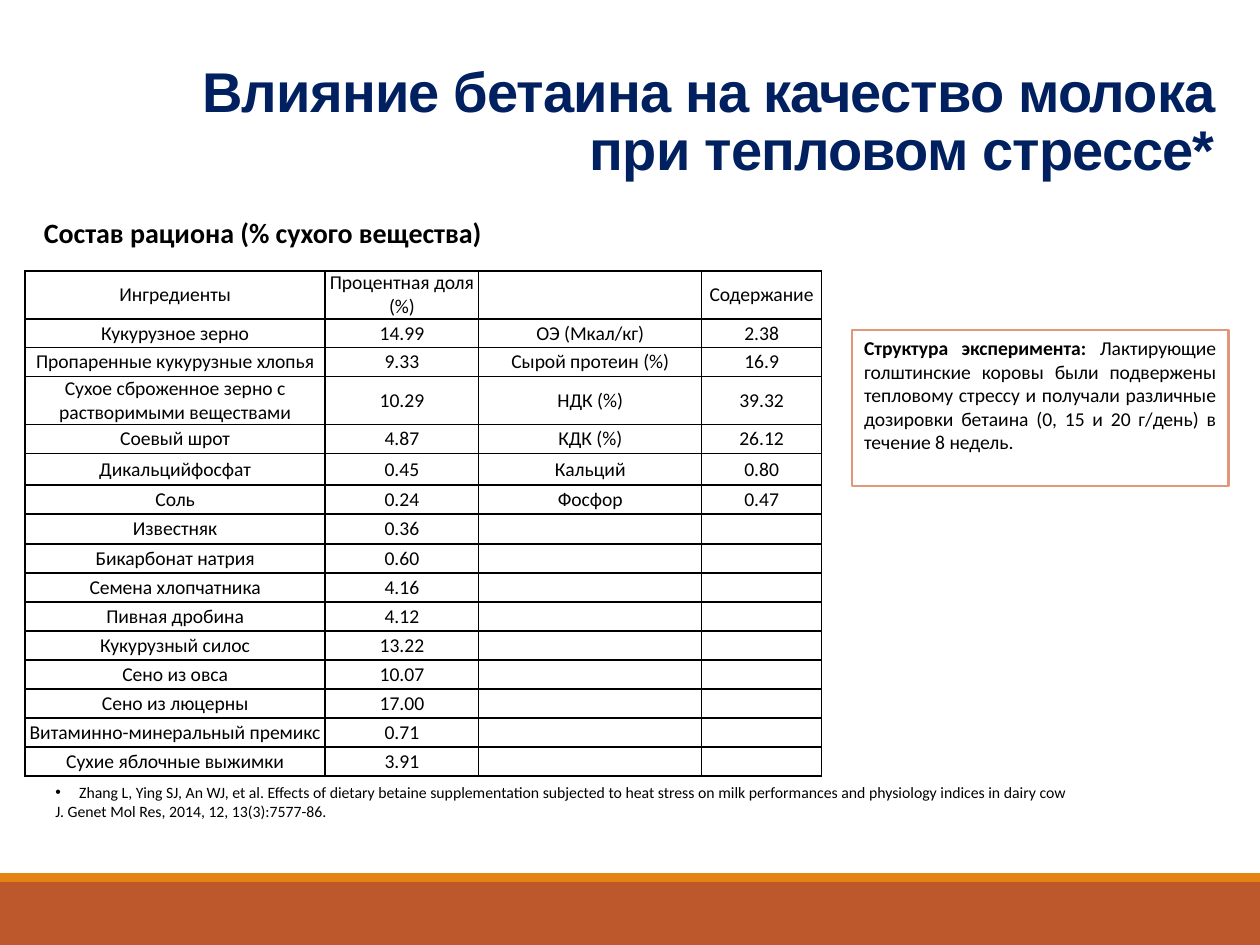
from dataclasses import dataclass
from typing import NamedTuple

from lxml.etree import SubElement
from pptx import Presentation
from pptx.dml.color import RGBColor
from pptx.enum.shapes import MSO_SHAPE
from pptx.enum.text import MSO_ANCHOR, PP_ALIGN
from pptx.oxml.ns import qn
from pptx.util import Emu, Inches, Pt

COLS, ROWS = 100, 75
CELL = Inches(0.1)


class Box(NamedTuple):
    """Place on the slide, in grid columns and rows."""
    left: float
    top: float
    width: float
    height: float

    def emu(self) -> list[Emu]:
        return [span(n) for n in self]


class Band(NamedTuple):
    box: Box
    color: str


class Run(NamedTuple):
    text: str
    bold: bool = False


@dataclass(frozen=True)
class Theme:
    ink: str = "000000"
    navy: str = "002060"
    paper: str = "FFFFFF"
    rust: str = "BD582C"
    amber: str = "E48312"
    frame: str = "E09878"
    head: str = "Arial"
    body: str = "Calibri"
    title: float = 32
    label: float = 16
    text: float = 11.2
    note: float = 9


THEME = Theme()

BANDS = (
    Band(Box(0, 70, COLS, 5), THEME.rust),
    Band(Box(0, 69.3, COLS, 0.7), THEME.amber),
)

WIDTHS = (23.8, 12.2, 17.7, 9.5)
ROW = 2.3
TALL = {0: 3.8, 3: 3.8, 5: 2.5, 7: 2.4}
DIET = (
    ("Ингредиенты", "Процентная доля (%)", "", "Содержание"),
    ("Кукурузное зерно", "14.99", "ОЭ (Мкал/кг)", "2.38"),
    ("Пропаренные кукурузные хлопья", "9.33", "Сырой протеин (%)", "16.9"),
    ("Сухое сброженное зерно с растворимыми веществами", "10.29",
     "НДК (%)", "39.32"),
    ("Соевый шрот", "4.87", "КДК (%)", "26.12"),
    ("Дикальцийфосфат", "0.45", "Кальций", "0.80"),
    ("Соль", "0.24", "Фосфор", "0.47"),
    ("Известняк", "0.36", "", ""),
    ("Бикарбонат натрия", "0.60", "", ""),
    ("Семена хлопчатника", "4.16", "", ""),
    ("Пивная дробина", "4.12", "", ""),
    ("Кукурузный силос", "13.22", "", ""),
    ("Сено из овса", "10.07", "", ""),
    ("Сено из люцерны", "17.00", "", ""),
    ("Витаминно-минеральный премикс", "0.71", "", ""),
    ("Сухие яблочные выжимки", "3.91", "", ""),
)
TRIAL = (
    Run("Структура эксперимента: ", True),
    Run("Лактирующие голштинские коровы были подвержены тепловому стрессу и "
        "получали различные дозировки бетаина (0, 15 и 20 г/день) в течение "
        "8 недель."),
)
SOURCE = (
    "Zhang L, Ying SJ, An WJ, et al. Effects of dietary betaine "
    "supplementation subjected to heat stress on milk performances and "
    "physiology indices in dairy cow",
    "J. Genet Mol Res, 2014, 12, 13(3):7577-86.",
)


def span(count: float) -> Emu:
    return Emu(round(count * CELL))


def style(para, size: float, align=PP_ALIGN.LEFT, color: str = THEME.ink,
          face: str = THEME.body, bold: bool = False) -> None:
    para.alignment = align
    font = para.font
    font.size, font.name, font.bold = Pt(size), face, bold
    font.color.rgb = RGBColor.from_string(color)


def add_text(slide, box: Box):
    frame = slide.shapes.add_textbox(*box.emu()).text_frame
    frame.word_wrap = True
    return frame


def add_rect(slide, box: Box, color: str):
    rect = slide.shapes.add_shape(MSO_SHAPE.RECTANGLE, *box.emu())
    rect.shadow.inherit = False
    rect.fill.solid()
    rect.fill.fore_color.rgb = RGBColor.from_string(color)
    rect.line.fill.background()
    return rect


def add_title(slide, box: Box, text: str) -> None:
    frame = add_text(slide, box)
    frame.vertical_anchor = MSO_ANCHOR.BOTTOM
    para = frame.paragraphs[0]
    para.line_spacing = 0.85
    run = para.add_run()
    run.text = text
    run._r.get_or_add_rPr().set("spc", "-50")
    style(para, THEME.title, PP_ALIGN.RIGHT, THEME.navy, THEME.head, True)


def add_label(slide, box: Box, text: str) -> None:
    para = add_text(slide, box).paragraphs[0]
    para.text = text
    style(para, THEME.label, bold=True)


def add_edges(cell) -> None:
    """Give all four sides of a cell a thin line."""
    props = cell._tc.get_or_add_tcPr()
    for side in ("a:lnL", "a:lnR", "a:lnT", "a:lnB"):
        line = SubElement(props, qn(side), w=str(Pt(1)))
        fill = SubElement(line, qn("a:solidFill"))
        SubElement(fill, qn("a:srgbClr"), val=THEME.ink)


def fill_cell(cell, text: str) -> None:
    add_edges(cell)
    cell.fill.background()
    cell.margin_left = cell.margin_right = 0
    cell.margin_top = cell.margin_bottom = 0
    cell.vertical_anchor = MSO_ANCHOR.MIDDLE
    para = cell.text_frame.paragraphs[0]
    para.text = text
    style(para, THEME.text, PP_ALIGN.CENTER)
    if not text:  # keeps an empty cell from stretching its row
        size = str(round(THEME.text * 100))
        SubElement(para._p, qn("a:endParaRPr"), sz=size)


def add_diet(slide, left: float, top: float) -> None:
    tall = [TALL.get(i, ROW) for i in range(len(DIET))]
    box = Box(left, top, sum(WIDTHS), sum(tall))
    table = slide.shapes.add_table(len(DIET), len(WIDTHS), *box.emu()).table
    table.first_row = table.horz_banding = False
    for col, width in zip(table.columns, WIDTHS):
        col.width = span(width)
    for row, height, texts in zip(table.rows, tall, DIET):
        row.height = span(height)
        for cell, text in zip(row.cells, texts):
            fill_cell(cell, text)


def add_trial(slide, box: Box) -> None:
    rect = add_rect(slide, box, THEME.paper)
    rect.line.color.rgb = RGBColor.from_string(THEME.frame)
    rect.line.width = Pt(1.25)
    frame = rect.text_frame
    frame.word_wrap = True
    frame.vertical_anchor = MSO_ANCHOR.TOP
    para = frame.paragraphs[0]
    for part in TRIAL:
        run = para.add_run()
        run.text, run.font.bold = part
    style(para, THEME.text, PP_ALIGN.JUSTIFY)


def add_source(slide, box: Box) -> None:
    frame = add_text(slide, box)
    frame.text = "\n".join(SOURCE)
    first = frame.paragraphs[0]._p.get_or_add_pPr()
    hang = Inches(0.19)
    first.set("marL", str(hang))
    first.set("indent", str(-hang))
    SubElement(first, qn("a:buFont"), typeface=THEME.head)
    SubElement(first, qn("a:buChar"), char="•")
    for para in frame.paragraphs:
        style(para, THEME.note, PP_ALIGN.JUSTIFY)


def main() -> None:
    deck = Presentation()
    deck.slide_width, deck.slide_height = span(COLS), span(ROWS)
    slide = deck.slides.add_slide(deck.slide_layouts[6])
    for band in BANDS:
        add_rect(slide, *band)
    add_label(slide, Box(2.5, 16.6, 62.4, 3.7),
              "Состав рациона (% сухого вещества)")
    add_diet(slide, 2, 21.5)
    add_trial(slide, Box(67.6, 26.2, 29.9, 12.4))
    add_title(slide, Box(12.4, 4.6, 85, 10.3),
              "Влияние бетаина на качество молока при тепловом стрессе*")
    add_source(slide, Box(3.4, 61.6, 94.9, 4))
    deck.save("out.pptx")


if __name__ == "__main__":
    main()
